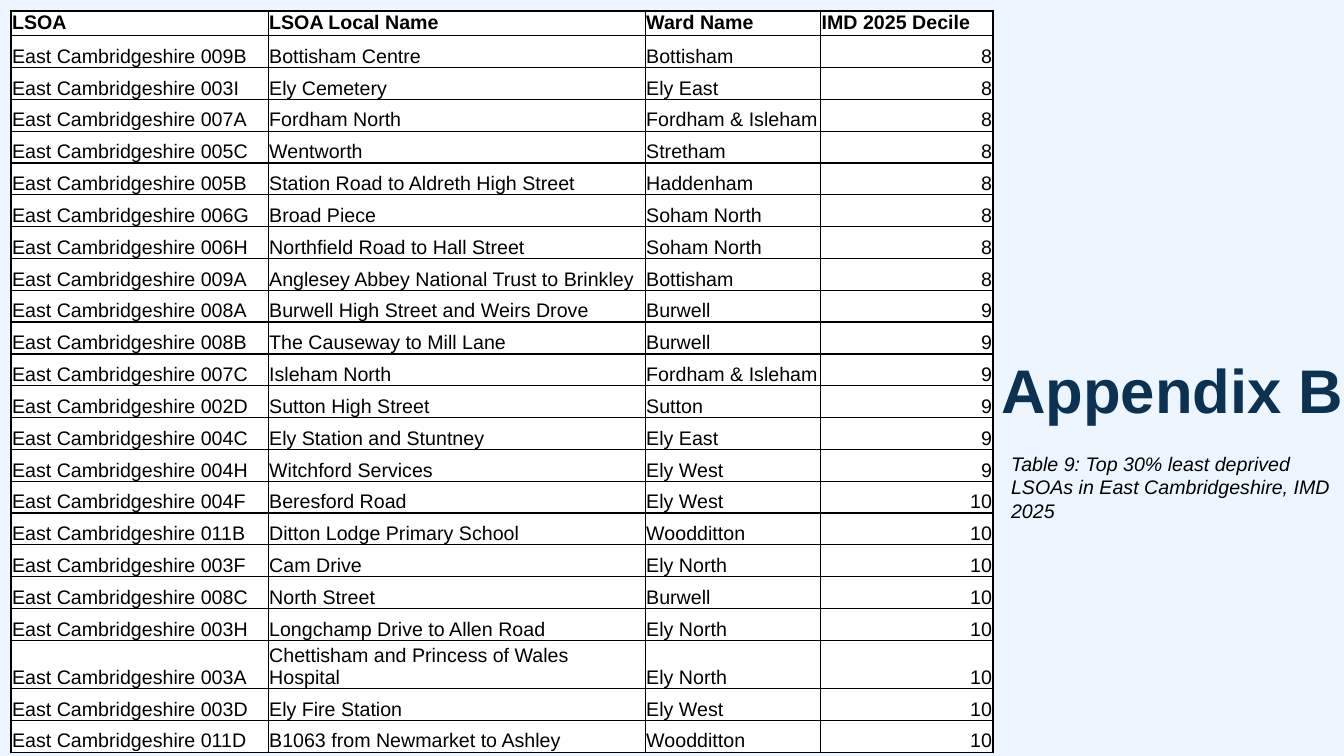
"""Build the Appendix B slide with its table of least deprived areas."""
from lxml import etree
from pptx import Presentation
from pptx import util as u
from pptx.dml.color import RGBColor
from pptx.enum import text as t
from pptx.oxml.ns import qn

HEAD = ("LSOA", "LSOA Local Name", "Ward Name", "IMD 2025 Decile")
AREA = "East Cambridgeshire"
ROWS = [
    ("009B", "Bottisham Centre", "Bottisham", 8),
    ("003I", "Ely Cemetery", "Ely East", 8),
    ("007A", "Fordham North", "Fordham & Isleham", 8),
    ("005C", "Wentworth", "Stretham", 8),
    ("005B", "Station Road to Aldreth High Street", "Haddenham", 8),
    ("006G", "Broad Piece", "Soham North", 8),
    ("006H", "Northfield Road to Hall Street", "Soham North", 8),
    ("009A", "Anglesey Abbey National Trust to Brinkley", "Bottisham", 8),
    ("008A", "Burwell High Street and Weirs Drove", "Burwell", 9),
    ("008B", "The Causeway to Mill Lane", "Burwell", 9),
    ("007C", "Isleham North", "Fordham & Isleham", 9),
    ("002D", "Sutton High Street", "Sutton", 9),
    ("004C", "Ely Station and Stuntney", "Ely East", 9),
    ("004H", "Witchford Services", "Ely West", 9),
    ("004F", "Beresford Road", "Ely West", 10),
    ("011B", "Ditton Lodge Primary School", "Woodditton", 10),
    ("003F", "Cam Drive", "Ely North", 10),
    ("008C", "North Street", "Burwell", 10),
    ("003H", "Longchamp Drive to Allen Road", "Ely North", 10),
    ("003A", "Chettisham and Princess of Wales Hospital", "Ely North", 10),
    ("003D", "Ely Fire Station", "Ely West", 10),
    ("011D", "B1063 from Newmarket to Ashley", "Woodditton", 10),
]
TITLE = "Appendix B"
NOTE = "Table 9: Top 30% least deprived LSOAs in East Cambridgeshire, IMD 2025"
THEME = {"font": "Arial", "title": 44, "body": 14, "line": 1,
         "back": "EDF6FF", "navy": "0B3153", "ink": "000000", "cell": "FFFFFF"}
COLS = (2.55, 3.74, 1.74, 1.71)
EDGE, HEAD_H, BODY_H = 0.11, 0.22, 6.95
SIDE, SIDE_W = 9.93, 3.4


def write(frame, words, size=THEME["body"], color=THEME["ink"], bold=False,
          italic=False, align=None, after=None, lead=None):
    para = frame.paragraphs[0]
    para.text = words
    para.alignment = align
    para.space_after = after
    para.line_spacing = lead
    font = para.runs[0].font
    font.name, font.size = THEME["font"], u.Pt(size)
    font.bold, font.italic = bold, italic
    font.color.rgb = RGBColor.from_string(color)


def add_box(slide, top, high):
    box = slide.shapes.add_textbox(*map(u.Inches, (SIDE, top, SIDE_W, high)))
    box.text_frame.word_wrap = True
    return box.text_frame


def style(cell):
    cell.margin_left = cell.margin_right = cell.margin_top = u.Inches(0.01)
    cell.margin_bottom = 0
    props = cell._tc.get_or_add_tcPr()
    for side in ("lnL", "lnR", "lnT", "lnB"):
        line = etree.SubElement(props, qn(f"a:{side}"), w=str(u.Pt(THEME["line"])))
        fill = etree.SubElement(line, qn("a:solidFill"))
        etree.SubElement(fill, qn("a:srgbClr"), val=THEME["ink"])
    cell.fill.solid()
    cell.fill.fore_color.rgb = RGBColor.from_string(THEME["cell"])


def add_grid(slide):
    data = [HEAD] + [(f"{AREA} {code}", *rest) for code, *rest in ROWS]
    size = (EDGE, EDGE, sum(COLS), HEAD_H + BODY_H)
    grid = slide.shapes.add_table(len(data), len(COLS), *map(u.Inches, size)).table
    for col, wide in zip(grid.columns, COLS):
        col.width = u.Inches(wide)
    for r, row in enumerate(data):
        grid.rows[r].height = u.Inches(BODY_H / len(ROWS) if r else HEAD_H)
        for c, value in enumerate(row):
            cell = grid.cell(r, c)
            style(cell)
            if r:
                cell.vertical_anchor = t.MSO_ANCHOR.BOTTOM
            align = t.PP_ALIGN.RIGHT if isinstance(value, int) else None
            write(cell.text_frame, str(value), bold=r == 0, align=align)


def main():
    deck = Presentation()
    deck.slide_width, deck.slide_height = u.Inches(13.33), u.Inches(7.5)
    slide = deck.slides.add_slide(deck.slide_layouts[6])
    back = slide.background.fill
    back.solid()
    back.fore_color.rgb = RGBColor.from_string(THEME["back"])
    title = add_box(slide, 3.57, 0.86)
    title.margin_left = title.margin_right = 0
    title.margin_top = title.margin_bottom = 0
    write(title, TITLE, size=THEME["title"], color=THEME["navy"], bold=True,
          after=u.Pt(6), lead=0.9)
    note = add_box(slide, 4.43, 0.81)
    note.auto_size = t.MSO_AUTO_SIZE.SHAPE_TO_FIT_TEXT
    write(note, NOTE, italic=True)
    add_grid(slide)
    deck.save("out.pptx")


if __name__ == "__main__":
    main()
